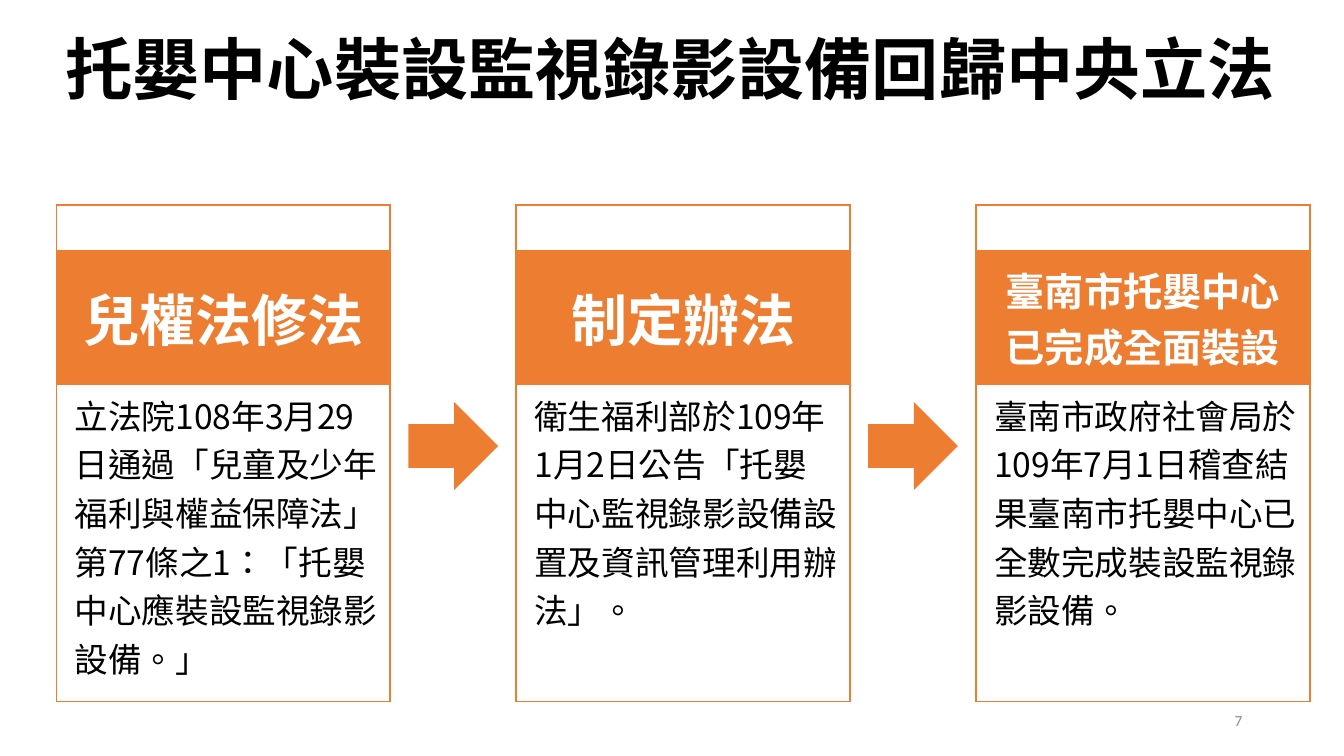
from dataclasses import dataclass

import lxml.etree
import pptx
import pptx.dml.color
import pptx.enum.shapes
import pptx.enum.text
import pptx.oxml.ns
import pptx.util

Inches = pptx.util.Inches
Pt = pptx.util.Pt
qn = pptx.oxml.ns.qn
PP_ALIGN = pptx.enum.text.PP_ALIGN
MIDDLE = pptx.enum.text.MSO_ANCHOR.MIDDLE

COLORS = {"text": "000000", "accent": "ED7D31", "paper": "FFFFFF", "number": "8C8C8C"}
CJK_FONT = "Noto Sans CJK SC"

CARD_LEFT, CARD_TOP, CARD_WIDTH, CARD_PITCH = 0.56, 2.03, 3.31, 4.56
ROW_HEIGHTS = (0.45, 1.34, 3.14)
ROW_FILLS = ("paper", "accent", "paper")
ROW_BORDERS = ("LRT", "LR", "LRB")
ARROW_TOP, ARROW_WIDTH, ARROW_HEIGHT = 3.99, 0.89, 0.87


@dataclass
class Step:
    heading: list[str]
    heading_size: int
    body: str


STEPS = [
    Step(["兒權法修法"], 40,
         "立法院108年3月29日通過「兒童及少年福利與權益保障法」第77條之1：「托嬰中心應裝設監視錄影設備。」"),
    Step(["制定辦法"], 40,
         "衛生福利部於109年1月2日公告「托嬰中心監視錄影設備設置及資訊管理利用辦法」。"),
    Step(["臺南市托嬰中心", "已完成全面裝設"], 28,
         "臺南市政府社會局於109年7月1日稽查結果臺南市托嬰中心已全數完成裝設監視錄影設備。"),
]


def rgb(name: str) -> pptx.dml.color.RGBColor:
    return pptx.dml.color.RGBColor.from_string(COLORS[name])


def write(frame, lines: list[str], size: int, color: str, bold: bool = False,
          align=PP_ALIGN.LEFT, font_name: str = CJK_FONT) -> None:
    """Fill a text frame with one paragraph per line."""
    frame.text = "\n".join(lines)
    for paragraph in frame.paragraphs:
        paragraph.alignment = align
        font = paragraph.font
        font.size, font.bold, font.name = Pt(size), bold, font_name
        font.color.rgb = rgb(color)
        defaults = paragraph._p.pPr.find(qn("a:defRPr"))
        lxml.etree.SubElement(defaults, qn("a:ea"), typeface=font_name)
        # Traditional Chinese sets the full stops and colons mid-cell
        for run in paragraph.runs:
            properties = run._r.get_or_add_rPr()
            properties.set("lang", "zh-TW")
            properties.set("altLang", "en-US")


def add_label(slide, box: tuple[float, float, float, float], text: str, size: int,
              color: str, **style):
    frame = slide.shapes.add_textbox(*map(Inches, box)).text_frame
    frame.word_wrap = True
    frame.vertical_anchor = MIDDLE
    write(frame, [text], size, color, **style)
    return frame


def set_borders(cell, visible: str) -> None:
    """Draw the named sides in the accent colour and clear the others."""
    properties = cell._tc.get_or_add_tcPr()
    for index, side in enumerate("LRTB"):
        line = lxml.etree.Element(qn(f"a:ln{side}"), w=str(Pt(1.5)))
        if side in visible:
            fill = lxml.etree.SubElement(line, qn("a:solidFill"))
            lxml.etree.SubElement(fill, qn("a:srgbClr"), val=COLORS["accent"])
        else:
            lxml.etree.SubElement(line, qn("a:noFill"))
        properties.insert(index, line)


def indent_body(paragraph) -> None:
    properties = paragraph._p.get_or_add_pPr()
    properties.set("marL", str(Inches(0.08)))
    properties.set("indent", "0")
    tabs = lxml.etree.Element(qn("a:tabLst"))
    lxml.etree.SubElement(tabs, qn("a:tab"), pos=str(Inches(1.96)), algn="l")
    properties.find(qn("a:defRPr")).addprevious(tabs)


def add_card(slide, left: float, step: Step) -> None:
    table = slide.shapes.add_table(
        len(ROW_HEIGHTS), 1, Inches(left), Inches(CARD_TOP),
        Inches(CARD_WIDTH), Inches(sum(ROW_HEIGHTS))).table
    table.first_row = table.horz_banding = False
    for row, height, fill, borders in zip(table.rows, ROW_HEIGHTS, ROW_FILLS, ROW_BORDERS):
        row.height = Inches(height)
        cell = row.cells[0]
        cell.fill.solid()
        cell.fill.fore_color.rgb = rgb(fill)
        set_borders(cell, borders)

    strip, heading, body = (table.cell(index, 0) for index in range(3))
    strip.margin_top = strip.margin_bottom = 0
    heading.vertical_anchor = MIDDLE
    write(heading.text_frame, step.heading, step.heading_size, "paper", True, PP_ALIGN.CENTER)
    write(body.text_frame, [step.body], 24, "text")
    indent_body(body.text_frame.paragraphs[0])


def add_arrow(slide, left: float) -> None:
    arrow = slide.shapes.add_shape(
        pptx.enum.shapes.MSO_SHAPE.RIGHT_ARROW, Inches(left), Inches(ARROW_TOP),
        Inches(ARROW_WIDTH), Inches(ARROW_HEIGHT))
    arrow.shadow.inherit = False
    arrow.fill.solid()
    arrow.fill.fore_color.rgb = rgb("accent")
    arrow.line.fill.background()


def main() -> None:
    deck = pptx.Presentation()
    deck.slide_width, deck.slide_height = Inches(13.33), Inches(7.5)
    slide = deck.slides.add_slide(deck.slide_layouts[6])

    # Title and page number
    title = add_label(slide, (0.55, 0.26, 12.41, 0.93),
                      "托嬰中心裝設監視錄影設備回歸中央立法", 48, "text", bold=True)
    title.paragraphs[0].line_spacing = 0.9
    add_label(slide, (9.42, 6.95, 3, 0.4), "7", 11, "number",
              align=PP_ALIGN.RIGHT, font_name="Calibri")

    # Steps, with an arrow centred in each gap
    gap = CARD_PITCH - CARD_WIDTH
    for index, step in enumerate(STEPS):
        left = CARD_LEFT + index * CARD_PITCH
        if index:
            add_arrow(slide, left - (gap + ARROW_WIDTH) / 2)
        add_card(slide, left, step)

    deck.save("out.pptx")


if __name__ == "__main__":
    main()
